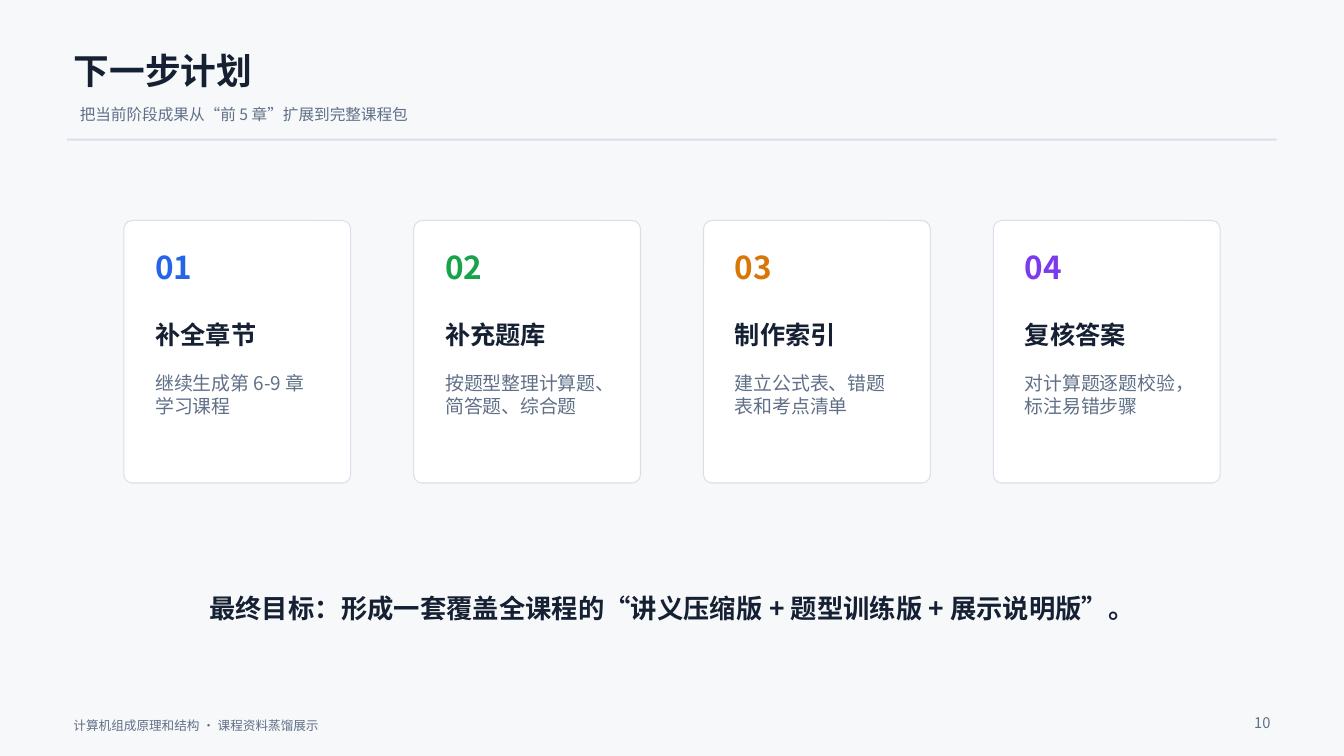
import pptx
import pptx.dml.color
import pptx.enum.shapes
import pptx.enum.text
import pptx.oxml.ns
import pptx.oxml.xmlchemy
import pptx.util

Pt = pptx.util.Pt
ALIGN = pptx.enum.text.PP_ALIGN
SHAPE = pptx.enum.shapes.MSO_SHAPE

# Content
TITLE = "下一步计划"
SUBTITLE = "把当前阶段成果从“前 5 章”扩展到完整课程包"
STEPS = [
    ("01", "补全章节", "继续生成第 6-9 章学习课程", "2563EB"),
    ("02", "补充题库", "按题型整理计算题、简答题、综合题", "16A34A"),
    ("03", "制作索引", "建立公式表、错题表和考点清单", "D97706"),
    ("04", "复核答案", "对计算题逐题校验，标注易错步骤", "7C3AED"),
]
GOAL = "最终目标：形成一套覆盖全课程的“讲义压缩版 + 题型训练版 + 展示说明版”。"
FOOTER = "计算机组成原理和结构 · 课程资料蒸馏展示"
PAGE = "10"

# Style and card grid, in points
FONT = "Noto Sans CJK SC"
INK, MUTED, RULE, PAPER, WHITE = "152033", "607087", "D9E0EA", "F7F8FA", "FFFFFF"
CARD_LEFT, CARD_TOP, CARD_WIDTH, CARD_HEIGHT = 88.5, 157.5, 162, 187.5
CARD_PITCH, CARD_PAD, CARD_RADIUS = 207, 18, 6


def color(hex_code):
    return pptx.dml.color.RGBColor.from_string(hex_code)


def write(box, place, text, size, ink, bold=False, align=ALIGN.LEFT):
    box.left, box.top, box.width, box.height = map(Pt, place)
    frame = box.text_frame
    frame_format = {
        "margin_left": Pt(4.5), "margin_right": Pt(4.5),
        "margin_top": Pt(3), "margin_bottom": Pt(3),
        "word_wrap": True,
        "auto_size": pptx.enum.text.MSO_AUTO_SIZE.NONE,
        "vertical_anchor": pptx.enum.text.MSO_ANCHOR.TOP,
    }
    for name, value in frame_format.items():
        setattr(frame, name, value)
    paragraph = frame.paragraphs[0]
    paragraph.alignment = align
    run = paragraph.add_run()
    run.text = text
    for name, value in {"name": FONT, "size": Pt(size), "bold": bold}.items():
        setattr(run.font, name, value)
    run.font.color.rgb = color(ink)
    # East Asian typeface
    east_asian = pptx.oxml.xmlchemy.OxmlElement("a:ea")
    east_asian.set("typeface", FONT)
    run.font._element.find(pptx.oxml.ns.qn("a:latin")).addnext(east_asian)


def add_text(slide, place, *text_format):
    write(slide.shapes.add_textbox(*map(Pt, place)), place, *text_format)


def add_panel(slide, kind, place, fill, line=None):
    panel = slide.shapes.add_shape(kind, *map(Pt, place))
    panel.shadow.inherit = False
    panel.fill.solid()
    panel.fill.fore_color.rgb = color(fill)
    if line:
        panel.line.color.rgb = color(line)
        panel.line.width = Pt(0.75)
    else:
        panel.line.fill.background()
    return panel


def add_step(slide, index, step):
    number, heading, detail, accent = step
    left = CARD_LEFT + index * CARD_PITCH
    card = add_panel(slide, SHAPE.ROUNDED_RECTANGLE,
                     (left, CARD_TOP, CARD_WIDTH, CARD_HEIGHT), WHITE, RULE)
    card.adjustments[0] = CARD_RADIUS / CARD_WIDTH
    inner_left, inner_width = left + CARD_PAD, CARD_WIDTH - 2 * CARD_PAD
    add_text(slide, (inner_left, 174, 60, 31.5), number, 22.5, accent, True)
    add_text(slide, (inner_left, 225, inner_width, 25.5), heading, 18, INK, True)
    add_text(slide, (inner_left, 262.5, inner_width, 52.5), detail, 13.5, MUTED)


def main():
    deck = pptx.Presentation()
    deck.slide_width, deck.slide_height = Pt(960), Pt(540)
    slide = deck.slides.add_slide(deck.slide_layouts[5])
    slide.background.fill.solid()
    slide.background.fill.fore_color.rgb = color(PAPER)

    # Header
    write(slide.shapes.title, (48, 31.5, 675, 43.5), TITLE, 25.5, INK, True)
    add_text(slide, (52.5, 72, 570, 24), SUBTITLE, 11.2, MUTED)
    add_panel(slide, SHAPE.RECTANGLE, (48, 99, 864, 1.5), RULE)

    # Step cards
    for index, step in enumerate(STEPS):
        add_step(slide, index, step)

    # Goal and footer
    add_text(slide, (112.5, 420, 735, 33), GOAL, 18.8, INK, True, ALIGN.CENTER)
    add_text(slide, (48, 510, 390, 18), FOOTER, 9, MUTED)
    add_text(slide, (870, 507, 42, 21), PAGE, 10.5, MUTED, False, ALIGN.RIGHT)

    deck.save("out.pptx")


if __name__ == "__main__":
    main()
